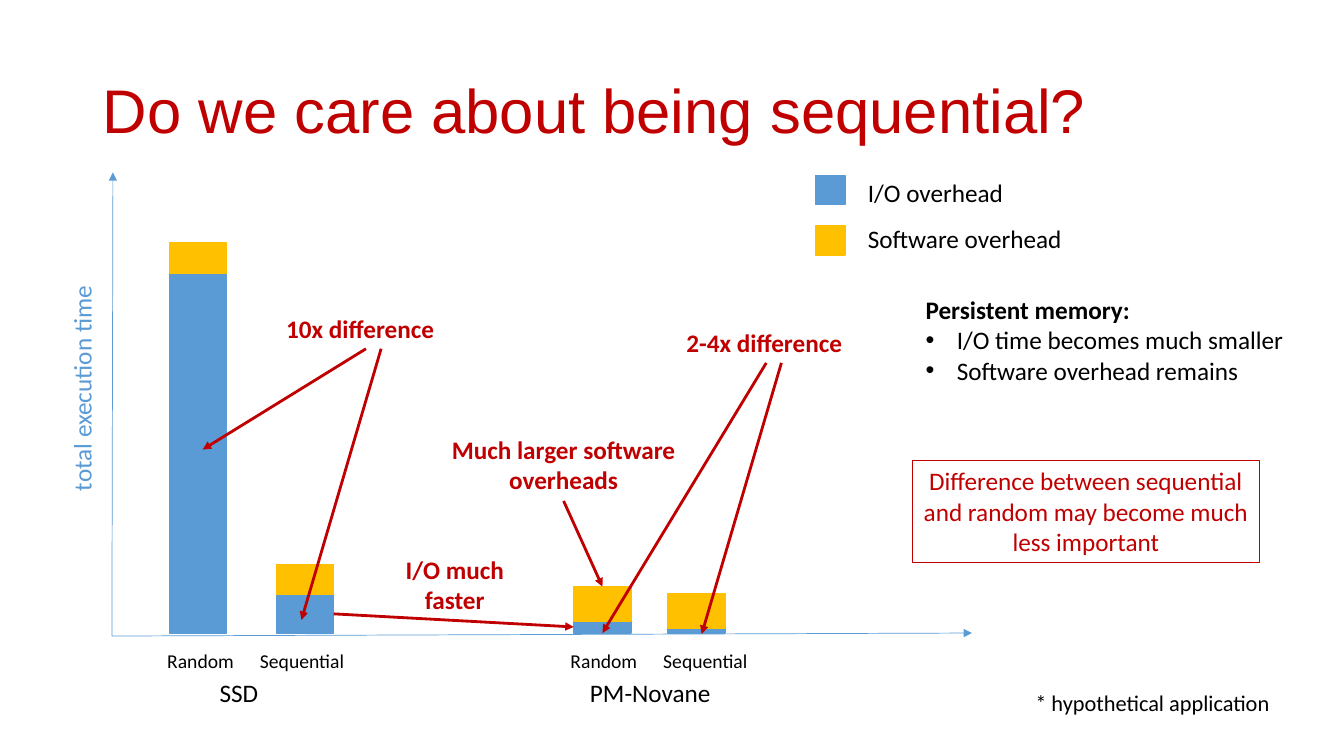
from lxml.etree import SubElement
from pptx import Presentation
from pptx.dml.color import RGBColor
from pptx.enum.shapes import MSO_CONNECTOR, MSO_SHAPE
from pptx.enum.text import MSO_ANCHOR, MSO_AUTO_SIZE, PP_ALIGN
from pptx.oxml.ns import qn
from pptx.util import Inches, Pt

BLUE = RGBColor(0x5B, 0x9B, 0xD5)
YELLOW = RGBColor(0xFF, 0xC0, 0x00)
RED = RGBColor(0xC0, 0x00, 0x00)
BLACK = RGBColor(0x00, 0x00, 0x00)

# Content: lengths in inches, boxes as (left, top, width, height)
TITLE = "Do we care about being sequential?"
AXIS_LABEL = "total execution time"
FOOTNOTE = "* hypothetical application"
BAR_NAMES = "Random\tSequential"
GROUPS = [  # name, label left, name box (left, width), bars (left, I/O, software)
    ("SSD", 1.56, (2.01, 0.72), [(1.68, 3.57, 0.3), (2.74, 0.38, 0.3)]),
    ("PM-Novane", 5.56, (5.56, 1.78), [(5.69, 0.12, 0.34), (6.62, 0.05, 0.34)]),
]
LEGEND = [("I/O overhead", BLUE, 1.71), ("Software overhead", YELLOW, 2.17)]
LIST_HEAD = "Persistent memory:"
LIST_ITEMS = ["I/O time becomes much smaller", "Software overhead remains"]
CONCLUSION = "Difference between sequential and random may become much less important"
CALLOUTS = {
    "ssd": ("10x difference", (2.74, 3.06, 1.78, 0.4), PP_ALIGN.LEFT),
    "pm": ("2-4x difference", (6.71, 3.2, 1.78, 0.4), PP_ALIGN.LEFT),
    "io": ("I/O much faster", (3.62, 5.45, 1.78, 0.71), PP_ALIGN.CENTER),
    "software": ("Much larger software overheads", (4.19, 4.26, 2.8, 0.71), PP_ALIGN.CENTER),
}
BASELINE, BAR_WIDTH, SWATCH = 6.28, 0.57, 0.29
ORIGIN = (1.11, 6.31)
TOP, LEFT, BOTTOM, RIGHT = range(4)

deck = Presentation()
deck.slide_width, deck.slide_height = Inches(13.33), Inches(7.5)
page = deck.slides.add_slide(deck.slide_layouts[1])


def place(shape, area):
    shape.left, shape.top, shape.width, shape.height = map(Inches, area)


def style(para, size=18, color=BLACK, bold=False, font="Calibri"):
    for span in para.runs:
        span.font.name, span.font.size, span.font.bold = font, Pt(size), bold
        span.font.color.rgb = color


def add_label(text, area, size=18, color=BLACK, bold=False, align=PP_ALIGN.LEFT):
    box = page.shapes.add_textbox(*map(Inches, area))
    box.text_frame.word_wrap = True
    para = box.text_frame.paragraphs[0]
    para.text, para.alignment = text, align
    style(para, size, color, bold)
    return box


def add_block(area, color):
    block = page.shapes.add_shape(MSO_SHAPE.RECTANGLE, *map(Inches, area))
    block.shadow.inherit = False
    block.fill.solid()
    block.fill.fore_color.rgb = block.line.color.rgb = color
    block.line.width = Pt(1)
    return block


def add_arrow(start, end, color=RED, width=2):
    """Each end is an (x, y) point or a (shape, side) pair."""
    points = [(0, 0) if hasattr(e[0], "shape_id") else e for e in (start, end)]
    arrow = page.shapes.add_connector(
        MSO_CONNECTOR.STRAIGHT, *[Inches(v) for point in points for v in point])
    if hasattr(start[0], "shape_id"):
        arrow.begin_connect(*start)
    if hasattr(end[0], "shape_id"):
        arrow.end_connect(*end)
    arrow.line.color.rgb, arrow.line.width = color, Pt(width)
    SubElement(arrow.line._get_or_add_ln(), qn("a:tailEnd"), type="triangle")
    SubElement(arrow._element.spPr, qn("a:effectLst"))


# Title
title = page.shapes.title
place(title, (0.92, 0.4, 11.5, 1.45))
title.text_frame.text = TITLE
title.text_frame.auto_size = MSO_AUTO_SIZE.NONE
title.text_frame.vertical_anchor = MSO_ANCHOR.MIDDLE
heading = title.text_frame.paragraphs[0]
heading.alignment, heading.line_spacing = PP_ALIGN.LEFT, 0.9
style(heading, 44, RED, font="Arial")

# Axes and footnote
add_arrow(ORIGIN, (1.12, 1.71), BLUE, 0.5)
add_arrow(ORIGIN, (9.64, 6.28), BLUE, 0.5)
add_label(AXIS_LABEL, (-0.32, 3.64, 2.26, 0.4), color=BLUE).rotation = 270
add_label(FOOTNOTE, (10.17, 6.79, 2.81, 0.37), size=16)

# Stacked bars with their names
bars = []
for name, label_left, (name_left, name_width), columns in GROUPS:
    names = add_label(BAR_NAMES, (label_left, 6.39, 2.47, 0.34), size=14)
    tabs = SubElement(names.text_frame.paragraphs[0]._p.get_or_add_pPr(), qn("a:tabLst"))
    SubElement(tabs, qn("a:tab"), pos=str(Inches(0.92)), algn="l")
    add_label(name, (name_left, 6.67, name_width, 0.4), align=PP_ALIGN.CENTER)
    for left, io, software in columns:
        io_top = BASELINE - io
        bars.append((add_block((left, io_top, BAR_WIDTH, io), BLUE),
                     add_block((left, io_top - software, BAR_WIDTH, software), YELLOW)))

# Legend
for row, (text, color, top) in enumerate(LEGEND):
    add_block((8.09, 1.74 + 0.5 * row, SWATCH, SWATCH), color)
    add_label(text, (8.51, top, 2.26, 0.4))

# Callouts and their arrows
notes = {key: add_label(text, area, color=RED, bold=True, align=align)
         for key, (text, area, align) in CALLOUTS.items()}
ssd_sequential_io = bars[1][0]
pm_random_io, pm_random_software = bars[2]
add_arrow((notes["ssd"], BOTTOM), (2.01, 4.46))
add_arrow((3.78, 3.46), (2.99, 6.15))
add_arrow((notes["pm"], BOTTOM), (pm_random_io, BOTTOM))
add_arrow((7.75, 3.6), (6.96, 6.29))
add_arrow((ssd_sequential_io, RIGHT), (pm_random_io, LEFT))
add_arrow((notes["software"], BOTTOM), (pm_random_software, TOP))

# Persistent memory list
body = page.placeholders[1]
place(body, (9.08, 2.87, 3.89, 1.01))
body.text_frame.text = "\n".join([LIST_HEAD, *LIST_ITEMS])
body.text_frame.auto_size = MSO_AUTO_SIZE.NONE
for row, para in enumerate(body.text_frame.paragraphs):
    para.space_before = Pt(0)
    props = para._p.get_or_add_pPr()
    indent = Inches(0.31) if row else 0
    props.set("marL", str(indent))
    props.set("indent", str(-indent))
    if row:
        SubElement(props, qn("a:buFont"), typeface="Arial")
        SubElement(props, qn("a:buChar"), char="•")
    else:
        SubElement(props, qn("a:buNone"))
    style(para, bold=row == 0)

# Framed conclusion
frame = add_label(CONCLUSION, (9.05, 4.57, 3.44, 1.01), color=RED, align=PP_ALIGN.CENTER)
frame.line.color.rgb, frame.line.width = RED, Pt(0.75)

deck.save("out.pptx")
